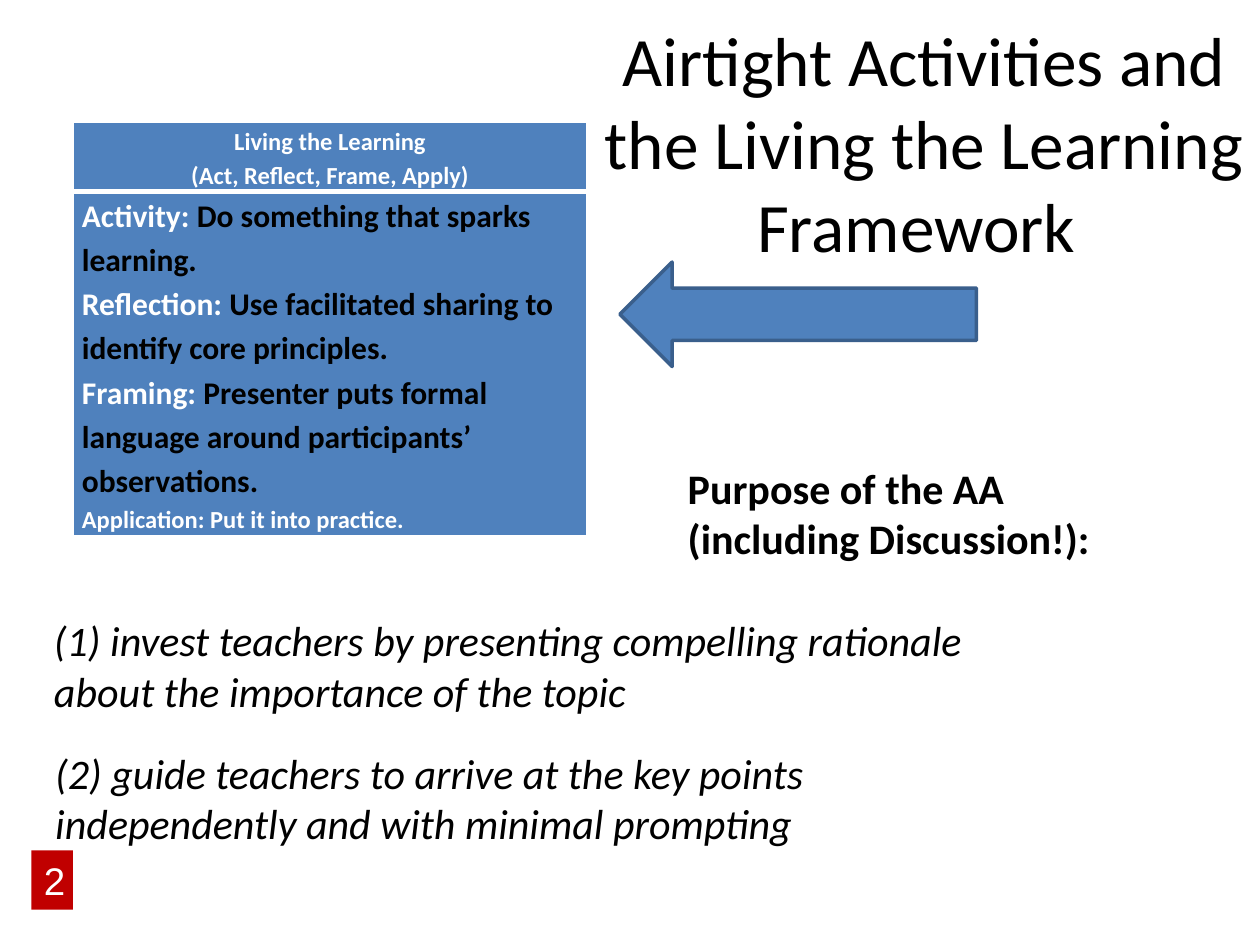
from lxml import etree
from pptx import Presentation
from pptx.dml.color import RGBColor
from pptx.enum.shapes import MSO_SHAPE
from pptx.enum.text import MSO_ANCHOR, MSO_AUTO_SIZE, PP_ALIGN
from pptx.oxml.ns import qn
from pptx.util import Inches, Pt

BLACK = RGBColor(0x00, 0x00, 0x00)
WHITE = RGBColor(0xFF, 0xFF, 0xFF)
BLUE = RGBColor(0x4F, 0x81, 0xBD)
DARK_BLUE = RGBColor(0x3A, 0x5F, 0x8C)
RED = RGBColor(0xC0, 0x00, 0x00)
CENTER, LEFT = PP_ALIGN.CENTER, PP_ALIGN.LEFT
MIDDLE = MSO_ANCHOR.MIDDLE
NO_FIT, GROW = MSO_AUTO_SIZE.NONE, MSO_AUTO_SIZE.SHAPE_TO_FIT_TEXT
LEFT_ARROW, RECTANGLE = MSO_SHAPE.LEFT_ARROW, MSO_SHAPE.RECTANGLE
TITLE_ONLY = 5

HEADER = ["Living the Learning", "(Act, Reflect, Frame, Apply)"]
STEPS = [
    ("Activity: ", "Do something that sparks learning."),
    ("Reflection: ", "Use facilitated sharing to identify core principles."),
    ("Framing: ", "Presenter puts formal language around participants’ observations."),
]
APPLICATION = "Application: Put it into practice."
NOTES = [
    ((5.36, 3.62, 3.75, 1.21), "Purpose of the AA (including Discussion!):", {"bold": True}),
    ((0.33, 4.83, 7.92, 1.21), "(1) invest teachers by presenting compelling rationale "
     "about the importance of the topic", {"italic": True}),
    ((0.34, 5.88, 6.33, 1.21), "(2) guide teachers to arrive at the key points "
     "independently and with minimal prompting", {"italic": True}),
]


def inches(box):
    return [Inches(v) for v in box]


def add_run(p, text, size, color=BLACK, **formats):
    r = p.add_run()
    r.text = text
    r.font.color.rgb = color
    for name, value in {"name": "Calibri", "size": Pt(size), **formats}.items():
        setattr(r.font, name, value)


def add_title(slide, box):
    sp = slide.shapes.title
    sp.left, sp.top, sp.width, sp.height = inches(box)
    tf = sp.text_frame
    tf.word_wrap, tf.auto_size, tf.vertical_anchor = True, NO_FIT, MIDDLE
    p = tf.paragraphs[0]
    p.alignment = CENTER
    add_run(p, "Airtight Activities and the Living the Learning Framework ", 39.6)


def set_borders(cell, widths):
    """Draw white cell borders; widths maps each side (L, R, T, B) to points."""
    tcPr = cell._tc.get_or_add_tcPr()
    for i, (side, width) in enumerate(widths.items()):
        ln = etree.Element(qn("a:ln" + side), w=str(Pt(width)))
        fill = etree.SubElement(ln, qn("a:solidFill"))
        etree.SubElement(fill, qn("a:srgbClr"), val=str(WHITE))
        tcPr.insert(i, ln)


def fill_cell(cell, paragraphs, align):
    """Write paragraphs, each a list of (text, size, colour) runs."""
    cell.fill.solid()
    cell.fill.fore_color.rgb = BLUE
    cell.margin_left = cell.margin_right = Inches(0.07)
    cell.margin_top = cell.margin_bottom = 0
    tf = cell.text_frame
    for i, runs in enumerate(paragraphs):
        p = tf.add_paragraph() if i else tf.paragraphs[0]
        p.alignment, p.line_spacing = align, 1.15
        for text, size, color in runs:
            add_run(p, text, size, color, bold=True)


def add_framework_table(slide, box):
    table = slide.shapes.add_table(2, 1, *inches(box)).table
    for row, height in zip(table.rows, (0.55, 2.51)):
        row.height = Inches(height)
    header, body = table.cell(0, 0), table.cell(1, 0)
    fill_cell(header, [[(text, 14, WHITE)] for text in HEADER], CENTER)
    steps = [[(name, 18, WHITE), (text, 18, BLACK)] for name, text in STEPS]
    fill_cell(body, steps + [[(APPLICATION, 14, WHITE)]], LEFT)
    set_borders(header, {"L": 1, "R": 1, "T": 1, "B": 3})
    set_borders(body, {"L": 1, "R": 1, "T": 3, "B": 1})


def add_block(slide, kind, box, color):
    sp = slide.shapes.add_shape(kind, *inches(box))
    sp.shadow.inherit = False
    sp.fill.solid()
    sp.fill.fore_color.rgb = color
    return sp


def add_arrow(slide, box):
    sp = add_block(slide, LEFT_ARROW, box, BLUE)
    sp.line.color.rgb, sp.line.width = DARK_BLUE, Pt(2)


def add_note(slide, box, text, formats):
    tf = slide.shapes.add_textbox(*inches(box)).text_frame
    tf.word_wrap, tf.auto_size = True, GROW
    add_run(tf.paragraphs[0], text, 24, **formats)


def add_page_number(slide, box):
    sp = add_block(slide, RECTANGLE, box, RED)
    sp.line.fill.background()
    tf = sp.text_frame
    tf.auto_size, tf.vertical_anchor = GROW, MSO_ANCHOR.TOP
    p = tf.paragraphs[0]
    p.alignment = LEFT
    add_run(p, "2", 22, WHITE, name="Arial")


def main():
    prs = Presentation()
    prs.slide_width, prs.slide_height = Inches(10), Inches(7.5)
    slide = prs.slides.add_slide(prs.slide_layouts[TITLE_ONLY])
    add_title(slide, (4.67, 0.5, 5.33, 1.25))
    add_framework_table(slide, (0.58, 0.97, 4.08, 3.06))
    add_arrow(slide, (4.92, 2.08, 2.83, 0.83))
    for box, text, formats in NOTES:
        add_note(slide, box, text, formats)
    add_page_number(slide, (0.25, 6.75, 0.33, 0.47))
    prs.save("out.pptx")


if __name__ == "__main__":
    main()
